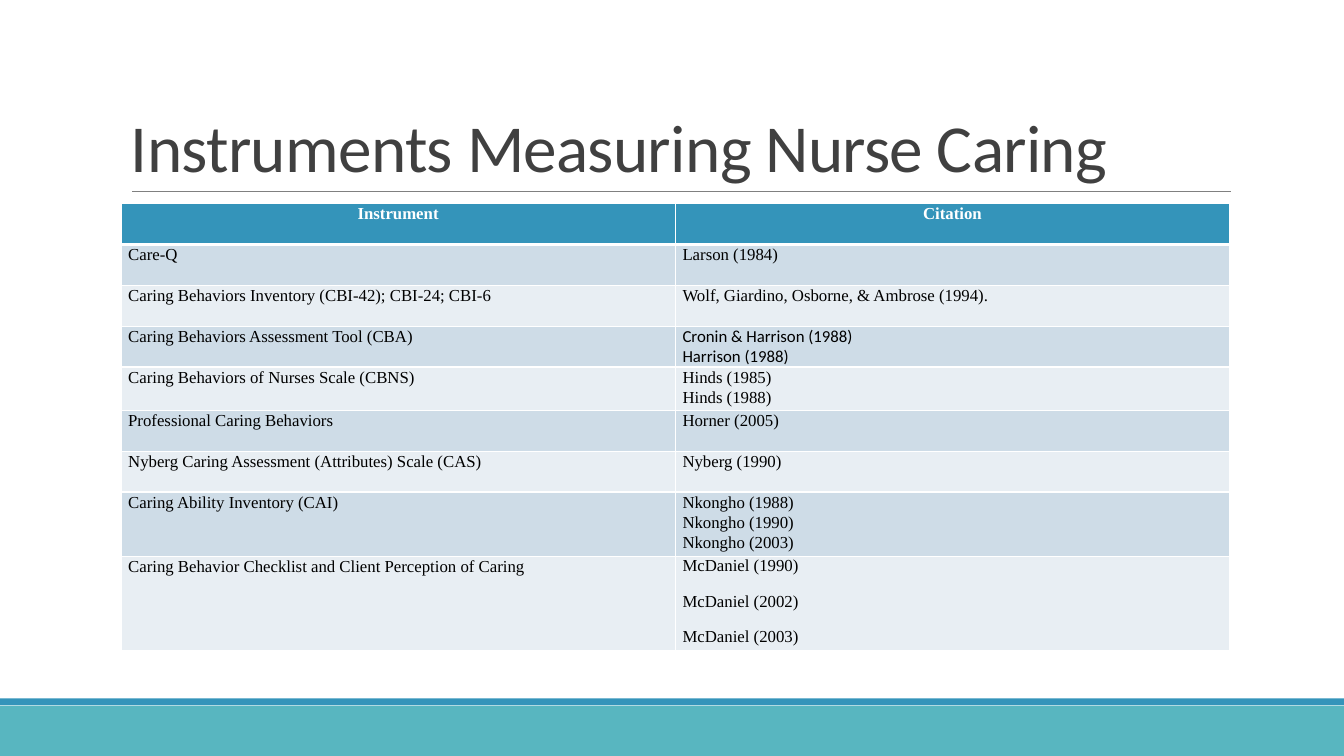
from dataclasses import dataclass

from lxml import etree
from pptx import Presentation
from pptx import util as u
from pptx.dml.color import RGBColor
from pptx.enum import shapes, text
from pptx.oxml import ns

SERIF, SANS = "Times New Roman", "Calibri"
BLUE, TEAL, WHITE, BLACK = "3494BA", "58B6C0", "FFFFFF", "000000"
BANDS = ("CEDCE7", "E8EEF3")
LEFT, WIDTH = 3.05, 27.94
LINE_Y = 4.83


@dataclass
class Bar:
    top: float
    height: float
    fill: str


@dataclass
class Row:
    instrument: str
    citations: list[str]
    height: float = 1.03
    citation_font: str = SERIF
    citation_spacing: float = 1.07
    space_before: float = 0


BARS = [Bar(17.78, 1.27, TEAL), Bar(17.6, 0.17, BLUE)]

ROWS = [
    Row("Care-Q", ["Larson (1984)"]),
    Row("Caring Behaviors Inventory (CBI-42); CBI-24; CBI-6",
        ["Wolf, Giardino, Osborne, & Ambrose (1994)."]),
    Row("Caring Behaviors Assessment Tool (CBA)",
        ["Cronin & Harrison (1988)", "Harrison (1988)"],
        citation_font=SANS, citation_spacing=1),
    Row("Caring Behaviors of Nurses Scale (CBNS)", ["Hinds (1985)", "Hinds (1988)"]),
    Row("Professional Caring Behaviors", ["Horner (2005)"]),
    Row("Nyberg Caring Assessment (Attributes) Scale (CAS)", ["Nyberg (1990)"]),
    Row("Caring Ability Inventory (CAI)",
        ["Nkongho (1988)", "Nkongho (1990)", "Nkongho (2003)"], height=1.5),
    Row("Caring Behavior Checklist and Client Perception of Caring",
        ["McDaniel (1990)", "McDaniel (2002)", "McDaniel (2003)"],
        height=2.27, citation_spacing=1, space_before=12),
]


def rgb(value: str) -> RGBColor:
    return RGBColor.from_string(value)


def set_font(p, name: str, size: float, color: str, bold: bool = False) -> None:
    p.font.name = name
    p.font.size = u.Pt(size)
    p.font.bold = bold
    p.font.color.rgb = rgb(color)


def add_bar(s, bar: Bar, slide_width: int) -> None:
    sp = s.shapes.add_shape(shapes.MSO_SHAPE.RECTANGLE, 0, u.Cm(bar.top),
                            slide_width, u.Cm(bar.height))
    sp.shadow.inherit = False
    sp.fill.solid()
    sp.fill.fore_color.rgb = rgb(bar.fill)
    sp.line.fill.background()


def add_title_rule(s) -> None:
    line = s.shapes.add_connector(shapes.MSO_CONNECTOR.STRAIGHT, u.Cm(3.33), u.Cm(LINE_Y),
                                  u.Cm(31.01), u.Cm(LINE_Y))
    line.line.color.rgb = rgb("808080")
    line.line.width = u.Pt(0.5)
    etree.SubElement(line._element.spPr, ns.qn("a:effectLst"))


def add_title(s, title: str) -> None:
    sp = s.shapes.add_textbox(u.Cm(LEFT), u.Cm(0.79), u.Cm(WIDTH), u.Cm(4.04))
    tf = sp.text_frame
    tf.word_wrap = True
    tf.vertical_anchor = text.MSO_ANCHOR.BOTTOM
    p = tf.paragraphs[0]
    p.text = title
    p.line_spacing = 0.85
    set_font(p, SANS, 48, "404040")
    p._p.get_or_add_pPr().get_or_add_defRPr().set("spc", "-50")


def set_borders(cell, bottom: float) -> None:
    tc_pr = cell._tc.get_or_add_tcPr()
    for side, width in (("L", 1), ("R", 1), ("T", 1), ("B", bottom)):
        ln = etree.SubElement(tc_pr, ns.qn(f"a:ln{side}"), w=str(u.Pt(width)))
        fill = etree.SubElement(ln, ns.qn("a:solidFill"))
        etree.SubElement(fill, ns.qn("a:srgbClr"), val=WHITE)


def fill_cell(cell, lines: list[str], fill: str, font: str = SERIF, spacing: float = 1.07,
              space_before: float = 0, header: bool = False) -> None:
    set_borders(cell, bottom=3 if header else 1)
    cell.fill.solid()
    cell.fill.fore_color.rgb = rgb(fill)
    cell.margin_left = cell.margin_right = u.Cm(0.18)
    cell.margin_top = cell.margin_bottom = 0
    cell.text = "\n".join(lines)
    for p in cell.text_frame.paragraphs:
        p.line_spacing = spacing
        p.space_before = u.Pt(space_before)
        p.alignment = text.PP_ALIGN.CENTER if header else text.PP_ALIGN.LEFT
        set_font(p, font, 12, WHITE if header else BLACK, bold=header)


def add_instrument_table(s) -> None:
    heights = [1.03] + [row.height for row in ROWS]
    table = s.shapes.add_table(len(heights), 2, u.Cm(LEFT), u.Cm(5.13), u.Cm(WIDTH),
                               u.Cm(sum(heights))).table
    for table_row, height in zip(table.rows, heights):
        table_row.height = u.Cm(height)
    for col, heading in enumerate(("Instrument", "Citation")):
        fill_cell(table.cell(0, col), [heading], BLUE, header=True)
    for i, row in enumerate(ROWS):
        band = BANDS[i % 2]
        fill_cell(table.cell(i + 1, 0), [row.instrument], band)
        fill_cell(table.cell(i + 1, 1), row.citations, band, row.citation_font,
                  row.citation_spacing, row.space_before)


def main() -> None:
    prs = Presentation()
    prs.slide_width, prs.slide_height = u.Cm(33.87), u.Cm(19.05)
    s = prs.slides.add_slide(prs.slide_layouts[6])
    for bar in BARS:
        add_bar(s, bar, prs.slide_width)
    add_title_rule(s)
    add_title(s, "Instruments Measuring Nurse Caring")
    add_instrument_table(s)
    prs.save("out.pptx")


if __name__ == "__main__":
    main()
